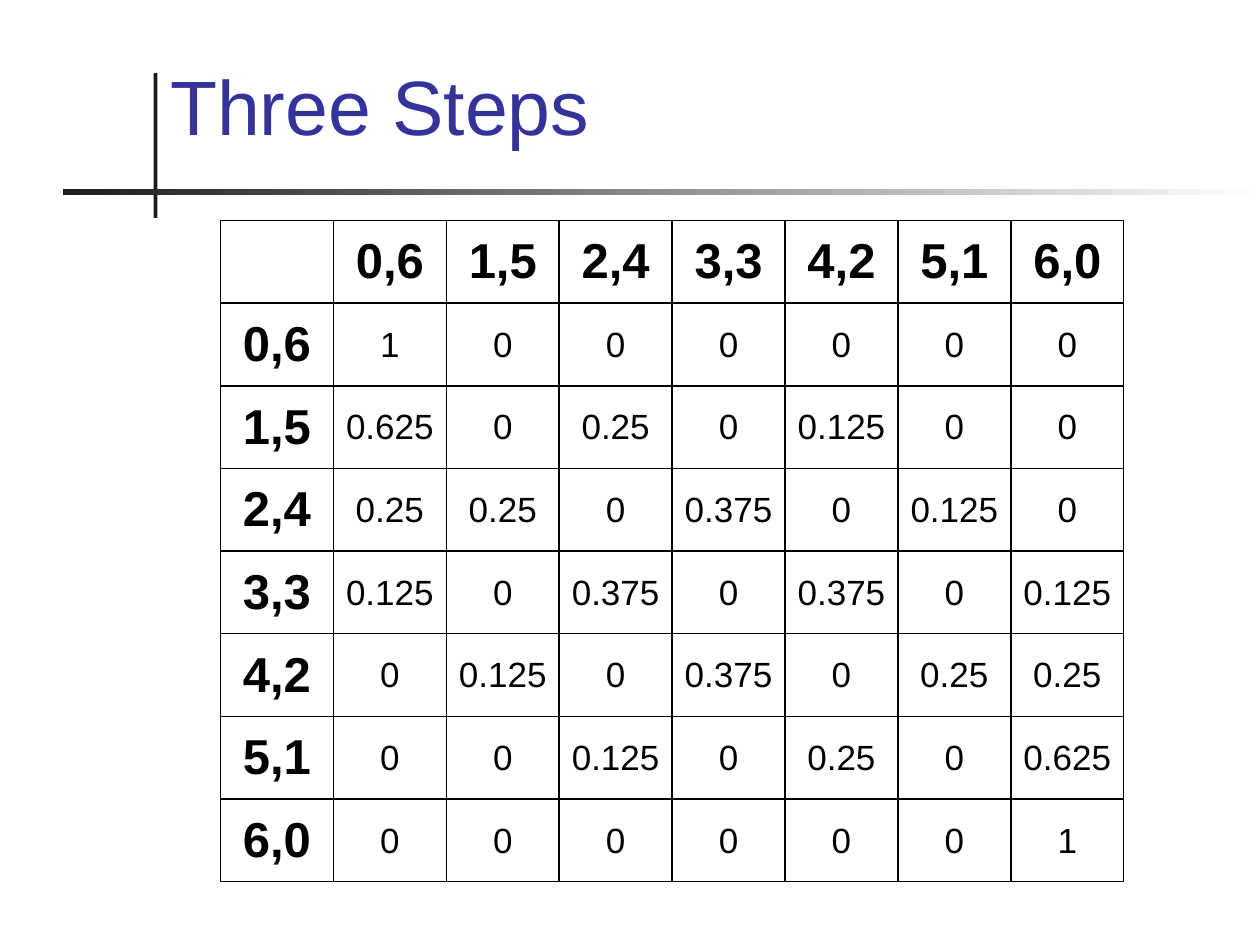
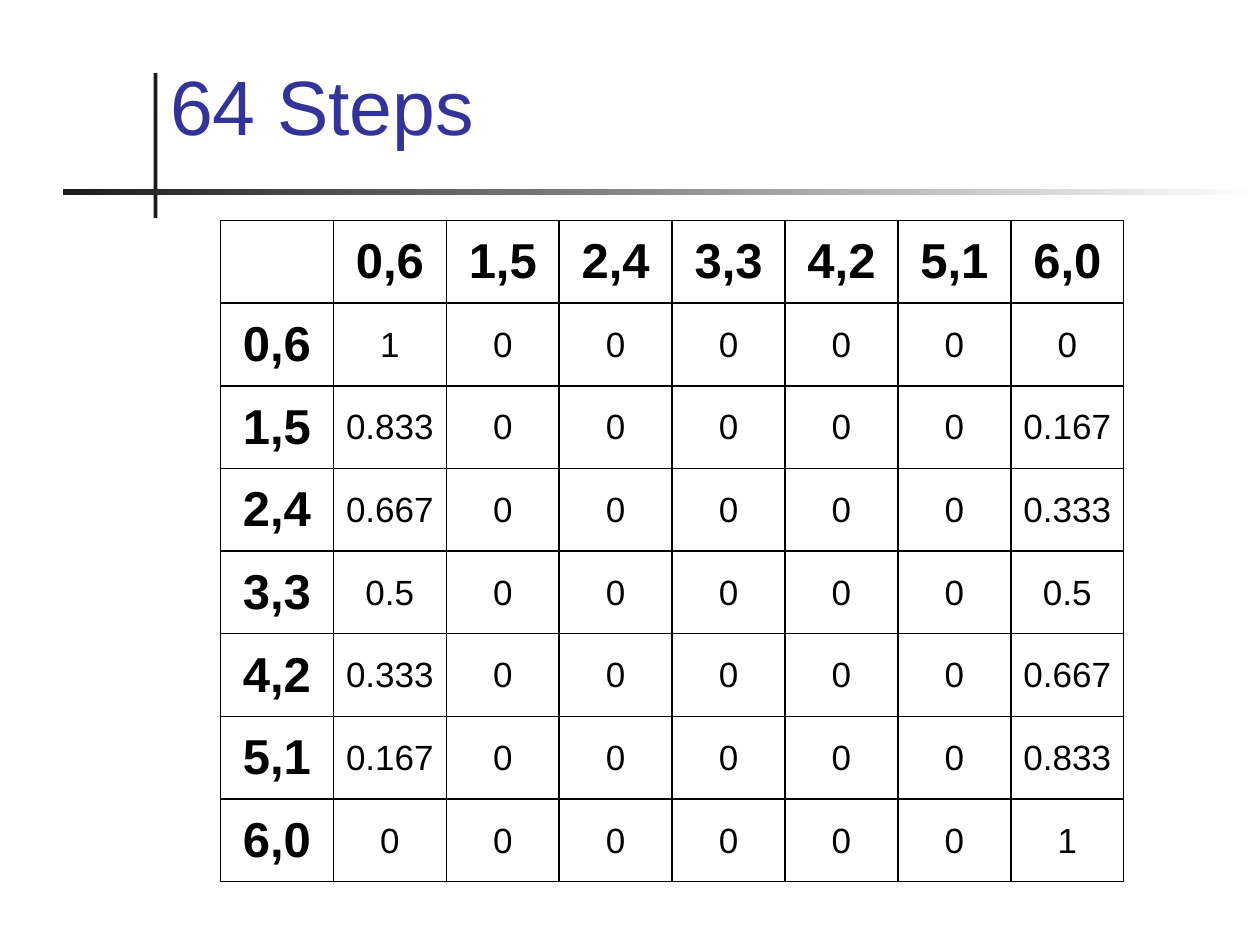
from lxml.etree import SubElement
from pptx import Presentation
from pptx.dml.color import RGBColor
from pptx.enum.shapes import MSO_SHAPE as Shape
from pptx.enum.text import MSO_ANCHOR as Anchor, MSO_AUTO_SIZE as AutoSize, PP_ALIGN as Align
from pptx.oxml.ns import qn
from pptx.util import Inches, Pt

STATES = ["0,6", "1,5", "2,4", "3,3", "4,2", "5,1", "6,0"]
TRANSITIONS = {
    "Three Steps": [
        "1 0 0 0 0 0 0",
        "0.625 0 0.25 0 0.125 0 0",
        "0.25 0.25 0 0.375 0 0.125 0",
        "0.125 0 0.375 0 0.375 0 0.125",
        "0 0.125 0 0.375 0 0.25 0.25",
        "0 0 0.125 0 0.25 0 0.625",
        "0 0 0 0 0 0 1",
    ],
    "64 Steps": [
        "1 0 0 0 0 0 0",
        "0.833 0 0 0 0 0 0.167",
        "0.667 0 0 0 0 0 0.333",
        "0.5 0 0 0 0 0 0.5",
        "0.333 0 0 0 0 0 0.667",
        "0.167 0 0 0 0 0 0.833",
        "0 0 0 0 0 0 1",
    ],
}

INK = RGBColor(0x1C, 0x1C, 0x1C)
WHITE = RGBColor(0xFF, 0xFF, 0xFF)
BLACK = RGBColor(0, 0, 0)
INDIGO = RGBColor(0x33, 0x33, 0x99)

SLIDE_SIZE = 10, 7.5
TITLE_BOX = 1.25, 0, 8.52, 1.25
UPRIGHT = 1.22, 0.58, 0.03, 1.15
RULE = 0.5, 1.5, 9.5, 0.05
MATRIX = 1.75, 1.75, 7.17, 5.25

TITLE_FONT = {"name": "Arial", "size": Pt(44), "bold": False}
STATE_FONT = {"name": "Arial", "size": Pt(28), "bold": True}
CHANCE_FONT = {"name": "Arial", "size": Pt(20), "bold": False}
TITLE_FRAME = {"vertical_anchor": Anchor.BOTTOM, "auto_size": AutoSize.NONE, "word_wrap": True}
STATE_CELL = {"vertical_anchor": Anchor.MIDDLE}
CHANCE_CELL = STATE_CELL | {
    "margin_left": Inches(0.01),
    "margin_top": Inches(0.01),
    "margin_right": Inches(0.01),
    "margin_bottom": 0,
}
PLAIN_GRID = {"first_row": False, "horz_banding": False}


def apply(target, values):
    for attribute, value in values.items():
        setattr(target, attribute, value)


def inches(box):
    return [Inches(length) for length in box]


def write(frame, words, font, color, alignment):
    frame.text = words
    paragraph = frame.paragraphs[0]
    paragraph.alignment = alignment
    run = paragraph.runs[0]
    apply(run.font, font)
    run.font.color.rgb = color


def add_bar(slide, box, *colors):
    bar = slide.shapes.add_shape(Shape.RECTANGLE, *inches(box))
    bar.shadow.inherit = False
    bar.line.fill.background()
    if len(colors) == 1:
        bar.fill.solid()
        bar.fill.fore_color.rgb = colors[0]
    else:
        bar.fill.gradient()
        bar.fill.gradient_angle = 0
        for stop, color in zip(bar.fill.gradient_stops, colors):
            stop.color.rgb = color


def add_title(slide, words):
    title = slide.shapes.title
    apply(title, dict(zip(("left", "top", "width", "height"), inches(TITLE_BOX))))
    apply(title.text_frame, TITLE_FRAME)
    write(title.text_frame, words, TITLE_FONT, INDIGO, Align.LEFT)


def add_borders(cell):
    properties = cell._tc.get_or_add_tcPr()
    for edge in ("a:lnL", "a:lnR", "a:lnT", "a:lnB"):
        line = SubElement(properties, qn(edge), w=str(Pt(1)))
        fill = SubElement(line, qn("a:solidFill"))
        SubElement(fill, qn("a:srgbClr"), val=str(BLACK))


def add_matrix(slide, chances):
    rows = [["", *STATES]]
    rows += [[state, *line.split()] for state, line in zip(STATES, chances)]
    side = len(rows)
    matrix = slide.shapes.add_table(side, side, *inches(MATRIX)).table
    apply(matrix, PLAIN_GRID)
    for r, row in enumerate(rows):
        for c, words in enumerate(row):
            cell = matrix.cell(r, c)
            is_chance = r > 0 and c > 0
            apply(cell, CHANCE_CELL if is_chance else STATE_CELL)
            add_borders(cell)
            cell.fill.background()
            if words:
                font = CHANCE_FONT if is_chance else STATE_FONT
                write(cell.text_frame, words, font, BLACK, Align.CENTER)


def main():
    deck = Presentation()
    deck.slide_width, deck.slide_height = inches(SLIDE_SIZE)
    for heading, chances in TRANSITIONS.items():
        slide = deck.slides.add_slide(deck.slide_layouts[5])
        add_bar(slide, UPRIGHT, INK)
        add_bar(slide, RULE, INK, WHITE)
        add_title(slide, heading)
        add_matrix(slide, chances)
    deck.save("out.pptx")


if __name__ == "__main__":
    main()
